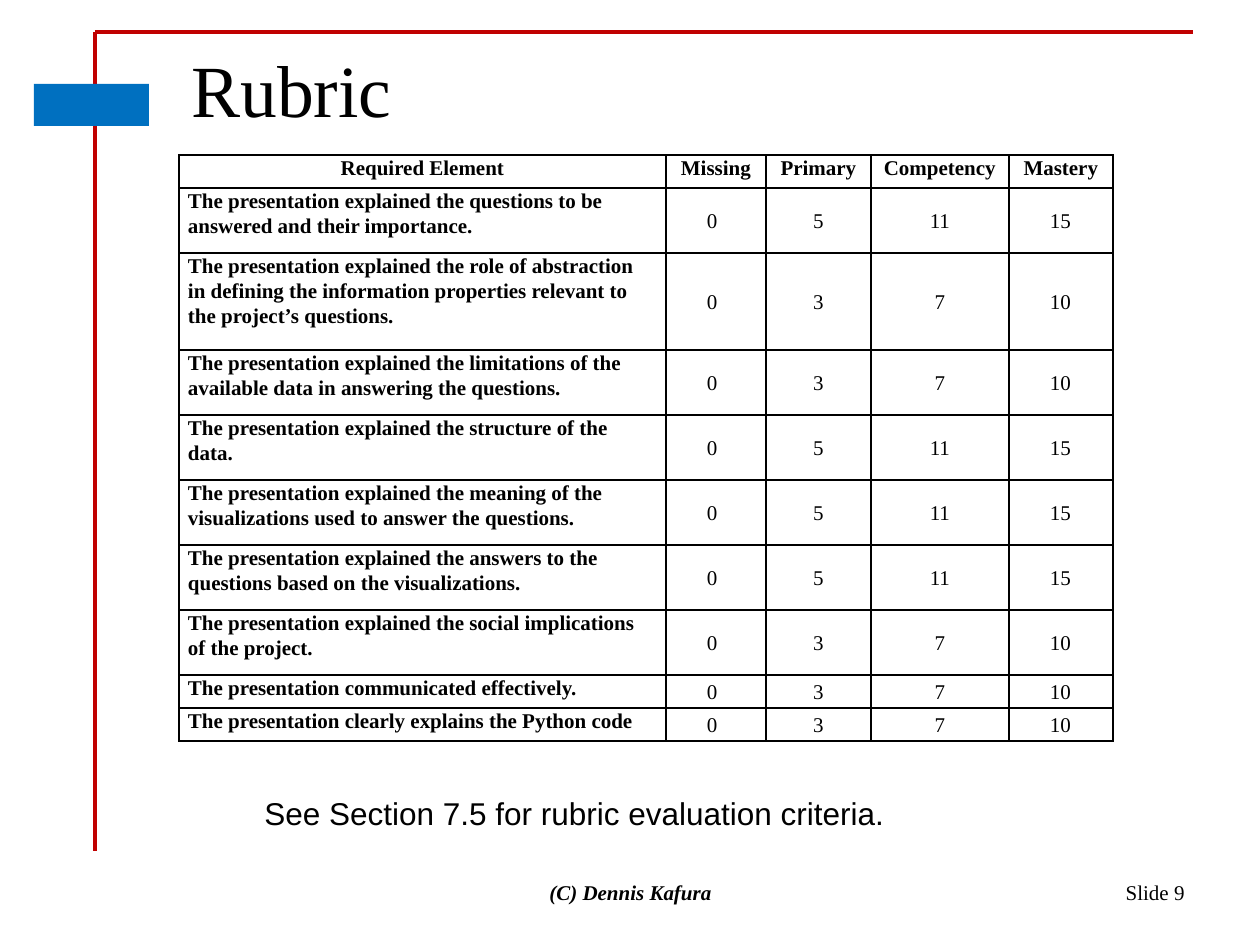
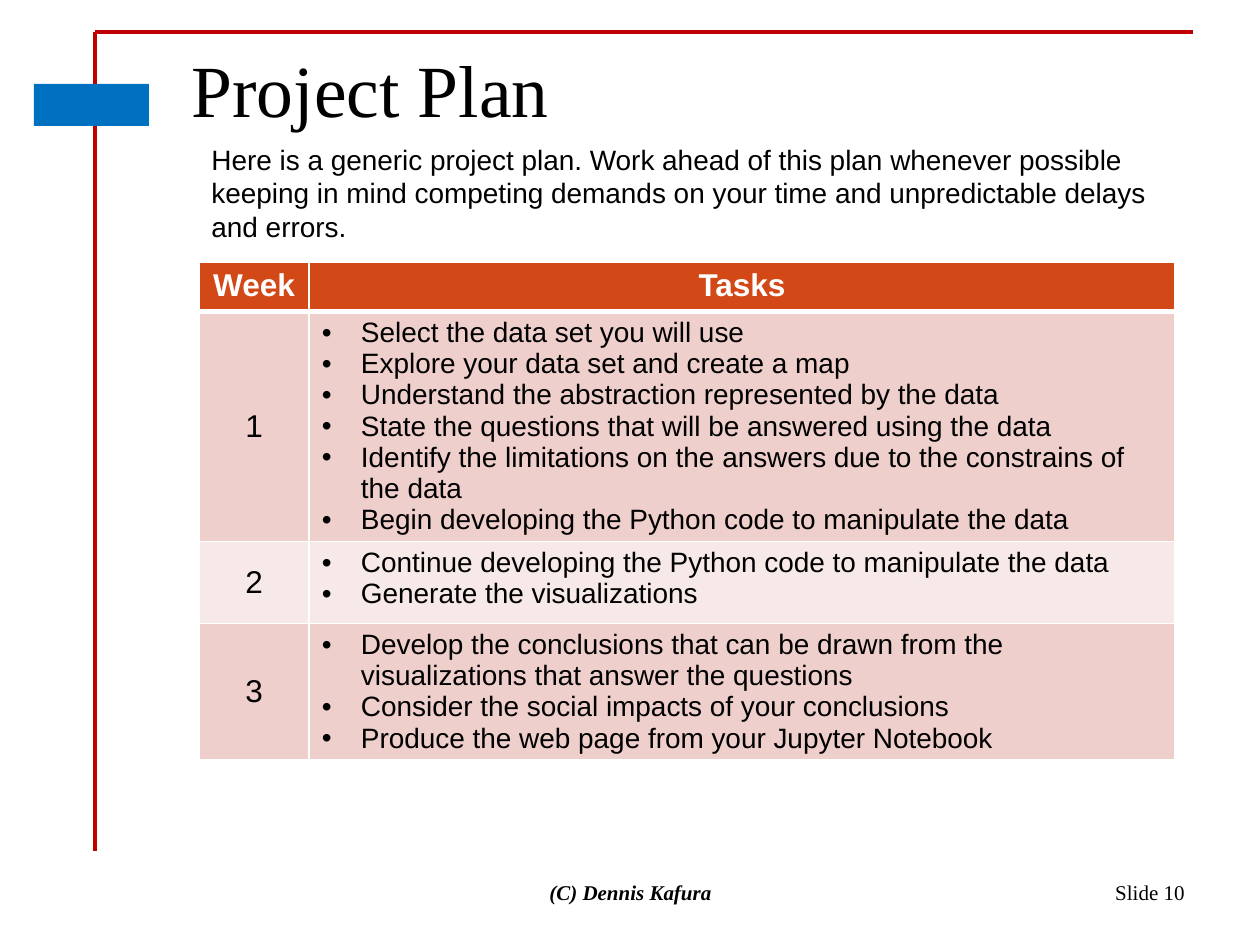
from dataclasses import dataclass
from typing import Optional, Union

from lxml.etree import SubElement
from pptx import Presentation
from pptx.dml.color import RGBColor
from pptx.enum.shapes import MSO_CONNECTOR, MSO_SHAPE
from pptx.enum.text import MSO_ANCHOR, MSO_AUTO_SIZE, PP_ALIGN
from pptx.oxml import parse_xml
from pptx.oxml.ns import nsdecls, qn
from pptx.util import Emu, Length, Pt

PX = 914400 / 126


def px(length: int) -> Emu:
    return Emu(round(length * PX))


@dataclass(frozen=True)
class Theme:
    sans: str = "Arial"
    serif: str = "Times New Roman"
    black: str = "000000"
    white: str = "FFFFFF"
    red: str = "C00000"
    blue: str = "0070C0"
    header: str = "D34817"
    band_dark: str = "EFCFCC"
    band_light: str = "F7E9E8"
    title: int = 42
    large: int = 18
    body: int = 16
    small: int = 12


THEME = Theme()


@dataclass(frozen=True)
class Style:
    size: int
    font: str = THEME.sans
    color: str = THEME.black
    bold: bool = False
    italic: bool = False


@dataclass(frozen=True)
class Box:
    left: int
    top: int
    width: int
    height: int

    def emu(self) -> tuple[Emu, ...]:
        return tuple(px(n) for n in (self.left, self.top, self.width, self.height))


@dataclass(frozen=True)
class Rule:
    x1: int
    y1: int
    x2: int
    y2: int
    weight: float


@dataclass(frozen=True)
class Criterion:
    element: str
    scores: tuple[int, ...]
    height: int


@dataclass(frozen=True)
class Week:
    tasks: tuple[str, ...]
    height: int
    fill: str


Runs = list[tuple[str, Style]]
Spacing = Optional[Union[float, Length]]

TITLE = Style(THEME.title, THEME.serif)
NOTE = Style(THEME.large)
BODY = Style(THEME.body)
SCORE = Style(THEME.small, THEME.serif)
ELEMENT = Style(THEME.small, THEME.serif, bold=True)
COPYRIGHT = Style(THEME.small, THEME.serif, bold=True, italic=True)
PLAN_HEADER = Style(THEME.large, color=THEME.white, bold=True)

FRAME = (
    Rule(95, 32, 1193, 32, 2),
    Rule(95, 32, 95, 84, 1.75),
    Rule(95, 126, 95, 851, 1.75),
)
BADGE = Box(34, 84, 115, 42)

RUBRIC_SPACING = 1.07
TASK_SPACING = Pt(17.75)
HIGH = (0, 5, 11, 15)
LOW = (0, 3, 7, 10)
RUBRIC_HEADER = ("Required Element", "Missing", "Primary", "Competency", "Mastery")
RUBRIC_COLUMNS = (487, 100, 105, 138, 104)
ONE_LINE, TWO_LINES, THREE_LINES = 33, 65, 97
CRITERIA = (
    Criterion("The presentation explained the questions to be answered and their importance.",
              HIGH, TWO_LINES),
    Criterion("The presentation explained the role of abstraction in defining the information "
              "properties relevant to the project’s questions.", LOW, THREE_LINES),
    Criterion("The presentation explained the limitations of the available data in answering "
              "the questions.", LOW, TWO_LINES),
    Criterion("The presentation explained the structure of the data.", HIGH, TWO_LINES),
    Criterion("The presentation explained the meaning of the visualizations used to answer "
              "the questions.", HIGH, TWO_LINES),
    Criterion("The presentation explained the answers to the questions based on the "
              "visualizations.", HIGH, TWO_LINES),
    Criterion("The presentation explained the social implications of the project.",
              LOW, TWO_LINES),
    Criterion("The presentation communicated effectively.", LOW, ONE_LINE),
    Criterion("The presentation clearly explains the Python code", LOW, ONE_LINE),
)

PLAN_COLUMNS = (110, 866)
PLAN_HEADER_HEIGHT = 48
WEEKS = (
    Week((
        "Select the data set you will use",
        "Explore your data set and create a map",
        "Understand the abstraction represented by the data",
        "State the questions that will be answered using the data",
        "Identify the limitations on the answers due to the constrains of the data",
        "Begin developing the Python code to manipulate the data",
    ), 230, THEME.band_dark),
    Week((
        "Continue developing the Python code to manipulate the data",
        "Generate the visualizations",
    ), 82, THEME.band_light),
    Week((
        "Develop the conclusions that can be drawn from the visualizations that answer "
        "the questions",
        "Consider the social impacts of your conclusions",
        "Produce the web page from your Jupyter Notebook",
    ), 136, THEME.band_dark),
)


# Text
def write(paragraph, runs: Runs, align=PP_ALIGN.LEFT, spacing: Spacing = None) -> None:
    paragraph.alignment = align
    if spacing:
        paragraph.line_spacing = spacing
    for text, style in runs:
        run = paragraph.add_run()
        run.text = text
        font = run.font
        font.name, font.size = style.font, Pt(style.size)
        font.bold, font.italic = style.bold, style.italic
        font.color.rgb = RGBColor.from_string(style.color)


def add_text(slide, box: Box, runs: Runs, align=PP_ALIGN.LEFT, anchor=MSO_ANCHOR.TOP,
             wrap: bool = True) -> None:
    frame = slide.shapes.add_textbox(*box.emu()).text_frame
    frame.word_wrap = wrap
    frame.vertical_anchor = anchor
    write(frame.paragraphs[0], runs, align)


def indent(paragraph, left: int, bullet: bool = False) -> None:
    properties = paragraph._p.get_or_add_pPr()
    properties.set("marL", str(px(left)))
    properties.set("indent", str(px(-left if bullet else 0)))
    if bullet:
        SubElement(properties, qn("a:buFont")).set("typeface", THEME.sans)
        SubElement(properties, qn("a:buChar")).set("char", "•")


# Tables
def add_table(slide, left: int, top: int, columns: tuple[int, ...], rows: list[int]):
    box = Box(left, top, sum(columns), sum(rows))
    table = slide.shapes.add_table(len(rows), len(columns), *box.emu()).table
    for column, width in zip(table.columns, columns):
        column.width = px(width)
    for row, height in zip(table.rows, rows):
        row.height = px(height)
    return table


def format_cell(cell, border: str, fill: Optional[str] = None, anchor=MSO_ANCHOR.TOP,
                margins: tuple[int, int] = (13, 6), top: int = 1, bottom: int = 1) -> None:
    cell.vertical_anchor = anchor
    cell.margin_left = cell.margin_right = px(margins[0])
    cell.margin_top = cell.margin_bottom = px(margins[1])
    if fill:
        cell.fill.solid()
        cell.fill.fore_color.rgb = RGBColor.from_string(fill)
    else:
        cell.fill.background()
    properties = cell._tc.get_or_add_tcPr()
    for place, (side, weight) in enumerate(zip("LRTB", (1, 1, top, bottom))):
        properties.insert(place, parse_xml(
            f'<a:ln{side} {nsdecls("a")} w="{Pt(weight)}"><a:solidFill>'
            f'<a:srgbClr val="{border}"/></a:solidFill></a:ln{side}>'))


# Shared slide parts
def add_rule(slide, rule: Rule) -> None:
    line = slide.shapes.add_connector(
        MSO_CONNECTOR.STRAIGHT, px(rule.x1), px(rule.y1), px(rule.x2), px(rule.y2))
    line.line.color.rgb = RGBColor.from_string(THEME.red)
    line.line.width = Pt(rule.weight)
    SubElement(line._element.spPr, qn("a:effectLst"))


def add_badge(slide) -> None:
    badge = slide.shapes.add_shape(MSO_SHAPE.RECTANGLE, *BADGE.emu())
    badge.shadow.inherit = False
    badge.fill.solid()
    badge.fill.fore_color.rgb = RGBColor.from_string(THEME.blue)
    badge.line.fill.background()


def add_slide(deck, heading: str, number: int):
    slide = deck.slides.add_slide(deck.slide_layouts[5])
    for rule in FRAME:
        add_rule(slide, rule)
    add_badge(slide)

    title = slide.shapes.title
    title.left, title.top, title.width, title.height = Box(179, 38, 1018, 98).emu()
    frame = title.text_frame
    frame.auto_size = MSO_AUTO_SIZE.NONE
    frame.vertical_anchor = MSO_ANCHOR.TOP
    write(frame.paragraphs[0], [(heading, TITLE)])

    add_text(slide, Box(903, 861, 294, 63), [(f"Slide {number}", SCORE)],
             PP_ALIGN.RIGHT, MSO_ANCHOR.MIDDLE)
    add_text(slide, Box(431, 861, 399, 63), [("(C) Dennis Kafura", COPYRIGHT)],
             PP_ALIGN.CENTER, MSO_ANCHOR.MIDDLE)
    return slide


# Slides
def build_rubric(deck) -> None:
    slide = add_slide(deck, "Rubric", 9)
    table = add_table(slide, 179, 155, RUBRIC_COLUMNS,
                      [ONE_LINE] + [criterion.height for criterion in CRITERIA])
    margins = (9, 0)
    for column, label in enumerate(RUBRIC_HEADER):
        cell = table.cell(0, column)
        format_cell(cell, THEME.black, margins=margins)
        write(cell.text_frame.paragraphs[0], [(label, ELEMENT)], PP_ALIGN.CENTER,
              RUBRIC_SPACING)
    for row, criterion in enumerate(CRITERIA, 1):
        cell = table.cell(row, 0)
        format_cell(cell, THEME.black, margins=margins)
        cell.margin_right = px(13)
        write(cell.text_frame.paragraphs[0], [(criterion.element, ELEMENT)],
              spacing=RUBRIC_SPACING)
        for column, score in enumerate(criterion.scores, 1):
            cell = table.cell(row, column)
            format_cell(cell, THEME.black, anchor=MSO_ANCHOR.MIDDLE, margins=margins)
            paragraph = cell.text_frame.paragraphs[0]
            # The outer score columns are indented, the inner ones centred
            outer = column in (1, len(criterion.scores))
            if outer:
                indent(paragraph, 32)
            write(paragraph, [(str(score), SCORE)],
                  PP_ALIGN.LEFT if outer else PP_ALIGN.CENTER, RUBRIC_SPACING)
    add_text(slide, Box(252, 788, 651, 50),
             [("See Section 7.5 for rubric evaluation criteria.", NOTE)], wrap=False)


def build_plan(deck) -> None:
    slide = add_slide(deck, "Project Plan", 10)
    table = add_table(slide, 199, 262, PLAN_COLUMNS,
                      [PLAN_HEADER_HEIGHT] + [week.height for week in WEEKS])
    for column, label in enumerate(("Week", "Tasks")):
        cell = table.cell(0, column)
        format_cell(cell, THEME.white, THEME.header, bottom=3)
        write(cell.text_frame.paragraphs[0], [(label, PLAN_HEADER)], PP_ALIGN.CENTER)
    for number, week in enumerate(WEEKS, 1):
        week_cell, task_cell = table.cell(number, 0), table.cell(number, 1)
        top = 3 if number == 1 else 1
        format_cell(week_cell, THEME.white, week.fill, MSO_ANCHOR.MIDDLE, top=top)
        format_cell(task_cell, THEME.white, week.fill, top=top)
        write(week_cell.text_frame.paragraphs[0], [(str(number), NOTE)], PP_ALIGN.CENTER)
        frame = task_cell.text_frame
        for position, task in enumerate(week.tasks):
            paragraph = frame.add_paragraph() if position else frame.paragraphs[0]
            indent(paragraph, 39, bullet=True)
            write(paragraph, [(task, BODY)], spacing=TASK_SPACING)
    add_text(slide, Box(199, 136, 977, 115),
             [("Here is a generic project plan. Work ahead of this plan whenever possible "
               "keeping in mind competing demands on your time and unpredictable delays "
               "and errors.", BODY)])


def main() -> None:
    deck = Presentation()
    deck.slide_width, deck.slide_height = px(1260), px(945)
    build_rubric(deck)
    build_plan(deck)
    deck.save("out.pptx")


if __name__ == "__main__":
    main()
